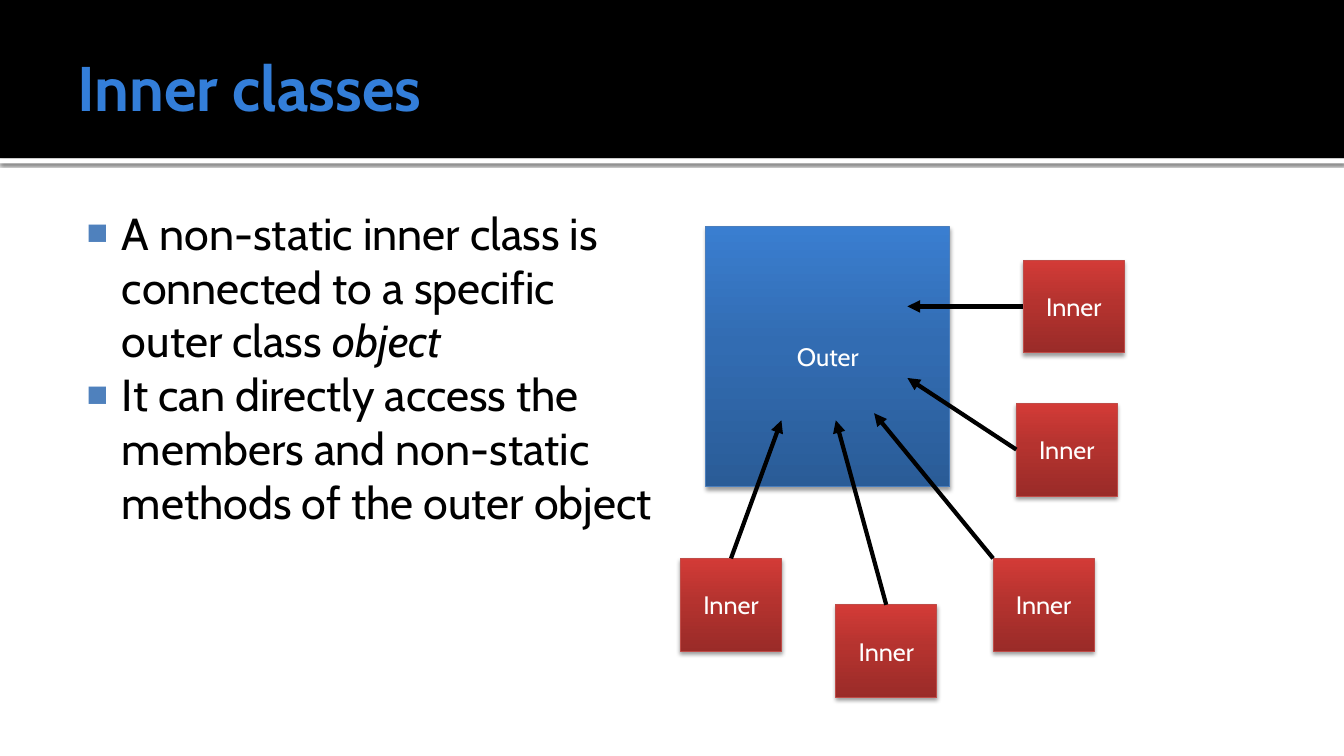
from typing import NamedTuple

from lxml.etree import SubElement
from pptx import Presentation
from pptx.dml.color import RGBColor
from pptx.enum.shapes import MSO_CONNECTOR, MSO_SHAPE
from pptx.enum.text import MSO_ANCHOR, MSO_AUTO_SIZE, PP_ALIGN
from pptx.oxml.ns import qn
from pptx.util import Inches, Pt

FONT = "Cabin"


class Theme(NamedTuple):
    gradient: tuple[tuple[int, str], ...]
    outline: str


class Reference(NamedTuple):
    """An inner box, and the arrow from it into the outer box."""
    left: float
    top: float
    start: tuple[float, float]
    end: tuple[float, float]


BLUE = Theme(((0, "2A5C97"), (55, "326CB2"), (100, "3A7ED0")), "4B7EBC")
RED = Theme(((0, "9A2B28"), (55, "B5332F"), (100, "D33B37")), "BF4C48")

INNER_WIDTH, INNER_HEIGHT = 1, 0.92
REFERENCES = [
    Reference(6.75, 5.54, (7.25, 5.54), (7.75, 4.17)),
    Reference(8.29, 6, (8.79, 6), (8.29, 4.17)),
    Reference(10.15, 2.58, (10.15, 3.04), (9, 3.04)),
    Reference(10.08, 4, (10.08, 4.46), (9, 3.75)),
    Reference(9.85, 5.54, (9.85, 5.54), (8.67, 4.1)),
]

# Each bullet is a list of (text, italic) runs.
BULLETS = [
    [("A non-static inner class is connected to a specific outer class ", False),
     ("object", True)],
    [("It can directly access the members and non-static methods of the outer object",
      False)],
]


def color(value: str) -> RGBColor:
    return RGBColor.from_string(value)


def add_text(paragraph, text: str, *, size: float, fill: str,
             bold: bool = False, italic: bool = False) -> None:
    run = paragraph.add_run()
    run.text = text
    run.font.name = FONT
    run.font.size = Pt(size)
    run.font.bold = bold
    run.font.italic = italic
    run.font.color.rgb = color(fill)


def add_shadow(shape, *, opacity: int, blur: float, distance: float) -> None:
    """Cast a black shadow straight down."""
    shape.shadow.inherit = False
    effects = shape._element.spPr.find(qn("a:effectLst"))
    shadow = SubElement(effects, qn("a:outerShdw"), blurRad=str(Pt(blur)),
                        dist=str(Pt(distance)), dir="5400000", rotWithShape="0")
    black = SubElement(shadow, qn("a:srgbClr"), val="000000")
    SubElement(black, qn("a:alpha"), val=str(opacity * 1000))


def add_rectangle(slide, left: float, top: float, width: float, height: float):
    return slide.shapes.add_shape(MSO_SHAPE.RECTANGLE, Inches(left), Inches(top),
                                  Inches(width), Inches(height))


def add_band(slide, top: float, height: float, fill: str):
    band = add_rectangle(slide, 0, top, 13.33, height)
    band.shadow.inherit = False
    band.fill.solid()
    band.fill.fore_color.rgb = color(fill)
    band.line.fill.background()
    return band


def add_class_box(slide, text: str, left: float, top: float,
                  width: float, height: float, theme: Theme) -> None:
    box = add_rectangle(slide, left, top, width, height)
    box.fill.gradient()
    box.fill.gradient_angle = 90
    stops = box._element.spPr.find(qn("a:gradFill")).find(qn("a:gsLst"))
    for stop in list(stops):
        stops.remove(stop)
    for position, value in theme.gradient:
        stop = SubElement(stops, qn("a:gs"), pos=str(position * 1000))
        SubElement(stop, qn("a:srgbClr"), val=value)
    box.line.color.rgb = color(theme.outline)
    box.line.width = Pt(0.5)
    add_shadow(box, opacity=38, blur=3.1, distance=2)
    box.text_frame.vertical_anchor = MSO_ANCHOR.MIDDLE
    paragraph = box.text_frame.paragraphs[0]
    paragraph.alignment = PP_ALIGN.CENTER
    add_text(paragraph, text, size=18, fill="FFFFFF")


def add_arrow(slide, start: tuple[float, float], end: tuple[float, float]) -> None:
    arrow = slide.shapes.add_connector(
        MSO_CONNECTOR.STRAIGHT, *(Inches(value) for value in start + end))
    arrow.line.color.rgb = color("000000")
    arrow.line.width = Pt(3)
    properties = arrow._element.spPr
    SubElement(properties.find(qn("a:ln")), qn("a:tailEnd"), type="triangle")
    SubElement(properties, qn("a:effectLst"))


def place(placeholder, left: float, top: float, width: float, height: float,
          insets: tuple[float, float, float, float], anchor: MSO_ANCHOR):
    """Move a placeholder, bring it to the front and return its text frame."""
    placeholder.left, placeholder.top = Inches(left), Inches(top)
    placeholder.width, placeholder.height = Inches(width), Inches(height)
    element = placeholder._element
    element.getparent().append(element)
    frame = placeholder.text_frame
    (frame.margin_left, frame.margin_top,
     frame.margin_right, frame.margin_bottom) = (Inches(inset) for inset in insets)
    frame.word_wrap = True
    frame.auto_size = MSO_AUTO_SIZE.NONE
    frame.vertical_anchor = anchor
    return frame


def format_bullet(paragraph) -> None:
    paragraph.alignment = PP_ALIGN.LEFT
    paragraph.space_before = Pt(0)
    properties = paragraph._p.get_or_add_pPr()
    properties.set("marL", str(Inches(0.48)))
    properties.set("indent", str(Inches(-0.35)))
    bullet_color = SubElement(properties, qn("a:buClr"))
    SubElement(bullet_color, qn("a:srgbClr"), val="4F81BD")
    SubElement(properties, qn("a:buSzPct"), val="80000")
    SubElement(properties, qn("a:buChar"), char="■")


def main() -> None:
    presentation = Presentation()
    presentation.slide_width, presentation.slide_height = Inches(13.33), Inches(7.5)
    slide = presentation.slides.add_slide(presentation.slide_layouts[1])

    rule = add_band(slide, 1.57, 0.05, "FFFFFF")
    add_shadow(rule, opacity=60, blur=2.5, distance=0.8)
    add_band(slide, 0, 1.57, "000000")

    title = place(slide.shapes.title, 0.67, 0.17, 12, 1.37,
                  (0.1, 0.05, 0.05, 0.05), MSO_ANCHOR.MIDDLE).paragraphs[0]
    title.alignment = PP_ALIGN.LEFT
    add_text(title, "Inner classes", size=45, fill="337ED9", bold=True)

    body = place(slide.placeholders[1], 0.67, 1.94, 5.92, 5.06,
                 (0.06, 0.1, 0.1, 0.05), MSO_ANCHOR.TOP)
    for index, runs in enumerate(BULLETS):
        paragraph = body.add_paragraph() if index else body.paragraphs[0]
        format_bullet(paragraph)
        for text, italic in runs:
            add_text(paragraph, text, size=32, fill="000000", italic=italic)

    add_class_box(slide, "Outer", 7, 2.25, 2.42, 2.58, BLUE)
    for reference in REFERENCES:
        add_class_box(slide, "Inner", reference.left, reference.top,
                      INNER_WIDTH, INNER_HEIGHT, RED)
    for reference in REFERENCES:
        add_arrow(slide, reference.start, reference.end)

    presentation.save("out.pptx")


if __name__ == "__main__":
    main()
